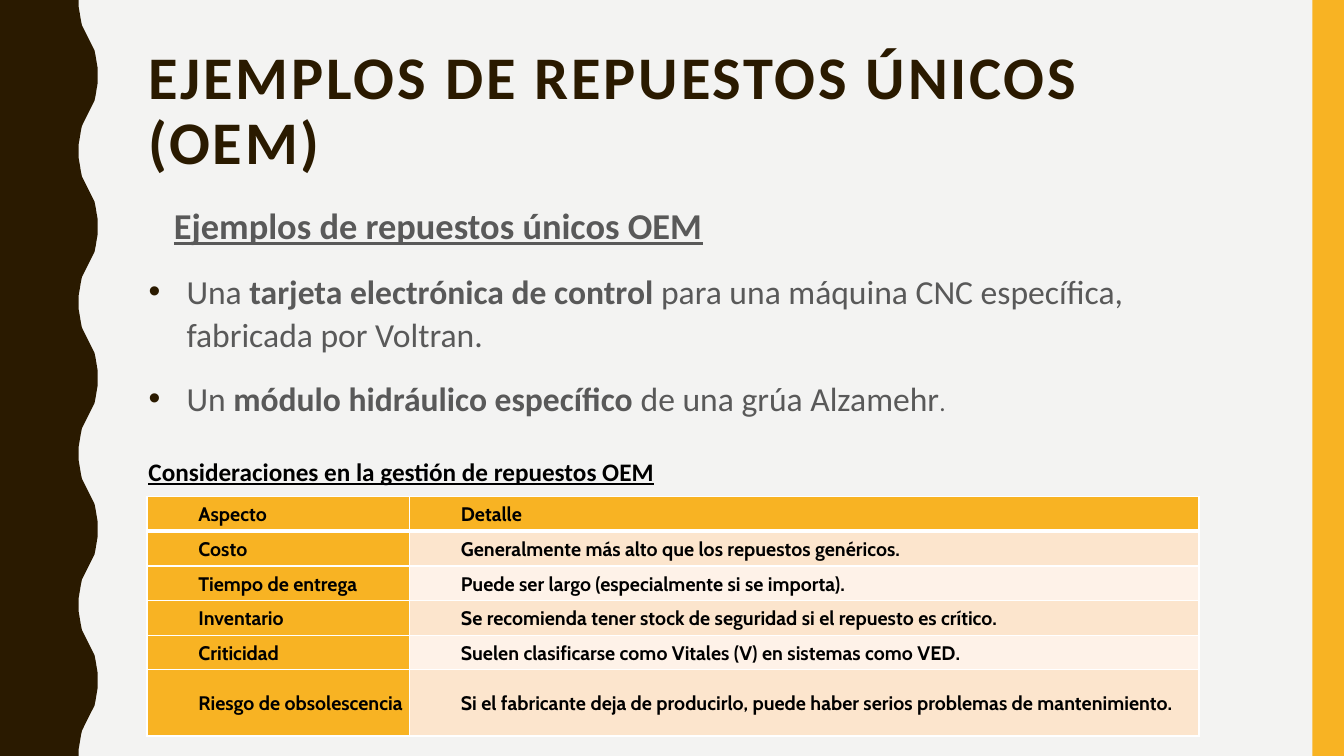
import dataclasses
import typing

import lxml.etree
import pptx
import pptx.dml.color
import pptx.enum.shapes
import pptx.enum.text
import pptx.oxml.ns
import pptx.util

PX = 9525  # EMU in one px, 96 px to the inch
WIDTH, HEIGHT = 1280, 720
BROWN, AMBER, PAPER = "2A1A00", "F8B323", "F3F3F2"
GREY, BLACK, WHITE = "595959", "000000", "FFFFFF"
BANDS = ("FCE5CD", "FEF2E8")
TOP = pptx.enum.text.MSO_ANCHOR.TOP
MIDDLE = pptx.enum.text.MSO_ANCHOR.MIDDLE

# One crest of the wavy edge, from its trough to its peak
HALF_WAVE = [(75, 0), (75, 7), (76, 13), (77, 19), (78, 24), (80, 28), (82, 32), (84, 36),
             (86, 40), (88, 44), (90, 48), (91, 53), (92, 59), (93, 65), (93, 72)]
WAVE_PERIOD = 144


@dataclasses.dataclass(frozen=True)
class Box:
    left: int
    top: int
    width: int
    height: int

    def emu(self) -> list[int]:
        return [px(n) for n in dataclasses.astuple(self)]


@dataclasses.dataclass(frozen=True)
class Example:
    lead: str
    spare: str
    rest: str
    end: str = ""


@dataclasses.dataclass(frozen=True)
class Aspect:
    name: str
    detail: str
    height: int = 33


TITLE_BOX = Box(132, 40, 1068, 156)
BODY_BOX = Box(132, 186, 1068, 468)
CAPTION_BOX = Box(132, 430, 1148, 38)
BAR_BOX = Box(1250, 0, 30, HEIGHT)
TABLE_LEFT, TABLE_TOP, COLUMNS = 140, 473, (250, 752)

EXAMPLES = [
    Example("Una ", "tarjeta electrónica de control",
            " para una máquina CNC específica, fabricada por Voltran."),
    Example("Un ", "módulo hidráulico específico", " de una grúa Alzamehr", "."),
]
ASPECTS = [
    Aspect("Aspecto", "Detalle"),
    Aspect("Costo", "Generalmente más alto que los repuestos genéricos."),
    Aspect("Tiempo de entrega", "Puede ser largo (especialmente si se importa)."),
    Aspect("Inventario", "Se recomienda tener stock de seguridad si el repuesto es crítico."),
    Aspect("Criticidad", "Suelen clasificarse como Vitales (V) en sistemas como VED."),
    Aspect("Riesgo de obsolescencia",
           "Si el fabricante deja de producirlo, puede haber serios problemas de mantenimiento.", 63),
]


def px(n: int) -> int:
    return n * PX


def rgb(color: str) -> pptx.dml.color.RGBColor:
    return pptx.dml.color.RGBColor.from_string(color)


def child(parent: typing.Any, tag: str, **attrs: str) -> typing.Any:
    return lxml.etree.SubElement(parent, pptx.oxml.ns.qn(tag), attrs)


def paint(shape: typing.Any, color: str) -> None:
    shape.shadow.inherit = False
    shape.fill.solid()
    shape.fill.fore_color.rgb = rgb(color)
    shape.line.fill.background()


def add_run(p: typing.Any, text: str, *, size: float, color: str, font: str = "Calibri",
            bold: bool = False, underline: bool = False, tracking: int = 0) -> None:
    """Append formatted text; tracking is in points."""
    r = p.add_run()
    r.text = text
    r.font.size = pptx.util.Pt(size)
    r.font.name = font
    r.font.bold = bold
    r.font.underline = underline
    r.font.color.rgb = rgb(color)
    if tracking:
        r.font._element.set("spc", str(tracking * 100))


def set_paragraph(p: typing.Any, *, margin: int = 0, indent: int = 0, line: float = 1.07,
                  before: int = 0, after: int = 8, bullet: str = "") -> None:
    p.alignment = pptx.enum.text.PP_ALIGN.LEFT
    p.line_spacing = line
    p.space_before = pptx.util.Pt(before)
    p.space_after = pptx.util.Pt(after)
    props = p._p.get_or_add_pPr()
    props.set("marL", str(px(margin)))
    props.set("indent", str(px(indent)))
    if bullet:
        child(child(props, "a:buClr"), "a:srgbClr", val=BROWN)
        child(props, "a:buFont", typeface="Arial")
        child(props, "a:buChar", char=bullet)
    else:
        child(props, "a:buNone")


def prepare_text(shape: typing.Any, box: Box, anchor: typing.Any) -> typing.Any:
    """Place a text shape and return its text frame."""
    shape.left, shape.top, shape.width, shape.height = box.emu()
    tf = shape.text_frame
    tf.word_wrap = True
    tf.auto_size = pptx.enum.text.MSO_AUTO_SIZE.NONE
    tf.vertical_anchor = anchor
    return tf


def add_decoration(s: typing.Any) -> None:
    rise = HALF_WAVE[1:]
    fall = [(x, WAVE_PERIOD - y) for x, y in reversed(HALF_WAVE[:-1])]
    edge = [(x, y + start) for start in range(0, HEIGHT, WAVE_PERIOD) for x, y in rise + fall]
    builder = s.shapes.build_freeform(0, 0, scale=PX)
    builder.add_line_segments([HALF_WAVE[0], *edge, (0, HEIGHT)], close=True)
    paint(builder.convert_to_shape(), BROWN)
    bar = s.shapes.add_shape(pptx.enum.shapes.MSO_SHAPE.RECTANGLE, *BAR_BOX.emu())
    paint(bar, AMBER)


def add_body(body: typing.Any) -> None:
    tf = prepare_text(body, BODY_BOX, TOP)
    p = tf.paragraphs[0]
    set_paragraph(p, margin=48, indent=-24, before=7)
    add_run(p, "Ejemplos de repuestos únicos OEM", size=26, color=GREY, bold=True, underline=True)
    for example in EXAMPLES:
        p = tf.add_paragraph()
        set_paragraph(p, margin=36, indent=-36, before=7, bullet="•")
        add_run(p, example.lead, size=24, color=GREY)
        add_run(p, example.spare, size=24, color=GREY, bold=True)
        add_run(p, example.rest, size=24, color=GREY)
        if example.end:
            add_run(p, example.end, size=18, color=GREY)


def format_cell(cell: typing.Any, text: str, fill: str, bottom: int) -> None:
    """Fill a cell; bottom is the width of its lower border in points."""
    cell.margin_left = cell.margin_right = cell.margin_top = cell.margin_bottom = px(1)
    cell.vertical_anchor = MIDDLE
    p = cell.text_frame.paragraphs[0]
    set_paragraph(p, margin=48)
    add_run(p, text, size=14, color=BLACK, font="Cabin", bold=True)
    props = cell._tc.get_or_add_tcPr()
    for side, width in (("L", 1), ("R", 1), ("T", 1), ("B", bottom)):
        border = child(props, f"a:ln{side}", w=str(pptx.util.Pt(width)))
        child(child(border, "a:solidFill"), "a:srgbClr", val=WHITE)
    cell.fill.solid()
    cell.fill.fore_color.rgb = rgb(fill)


def add_aspects(s: typing.Any) -> None:
    box = Box(TABLE_LEFT, TABLE_TOP, sum(COLUMNS), sum(a.height for a in ASPECTS))
    table = s.shapes.add_table(len(ASPECTS), len(COLUMNS), *box.emu()).table
    for column, width in zip(table.columns, COLUMNS):
        column.width = px(width)
    for i, aspect in enumerate(ASPECTS):
        table.rows[i].height = px(aspect.height)
        bottom = 1 if i else 3
        format_cell(table.cell(i, 0), aspect.name, AMBER, bottom)
        format_cell(table.cell(i, 1), aspect.detail, BANDS[(i - 1) % 2] if i else AMBER, bottom)


def main() -> None:
    prs = pptx.Presentation()
    prs.slide_width, prs.slide_height = px(WIDTH), px(HEIGHT)
    s = prs.slides.add_slide(prs.slide_layouts[1])
    s.background.fill.solid()
    s.background.fill.fore_color.rgb = rgb(PAPER)
    add_decoration(s)

    p = prepare_text(s.shapes.title, TITLE_BOX, TOP).paragraphs[0]
    set_paragraph(p, line=0.9, after=0)
    add_run(p, "EJEMPLOS DE REPUESTOS ÚNICOS (OEM)", size=43.2, color=BROWN, bold=True, tracking=2)
    add_body(s.placeholders[1])
    add_aspects(s)

    caption = s.shapes.add_textbox(*CAPTION_BOX.emu())
    p = prepare_text(caption, CAPTION_BOX, MIDDLE).paragraphs[0]
    add_run(p, "Consideraciones en la gestión de repuestos OEM",
            size=18, color=BLACK, bold=True, underline=True)
    prs.save("out.pptx")


if __name__ == "__main__":
    main()
